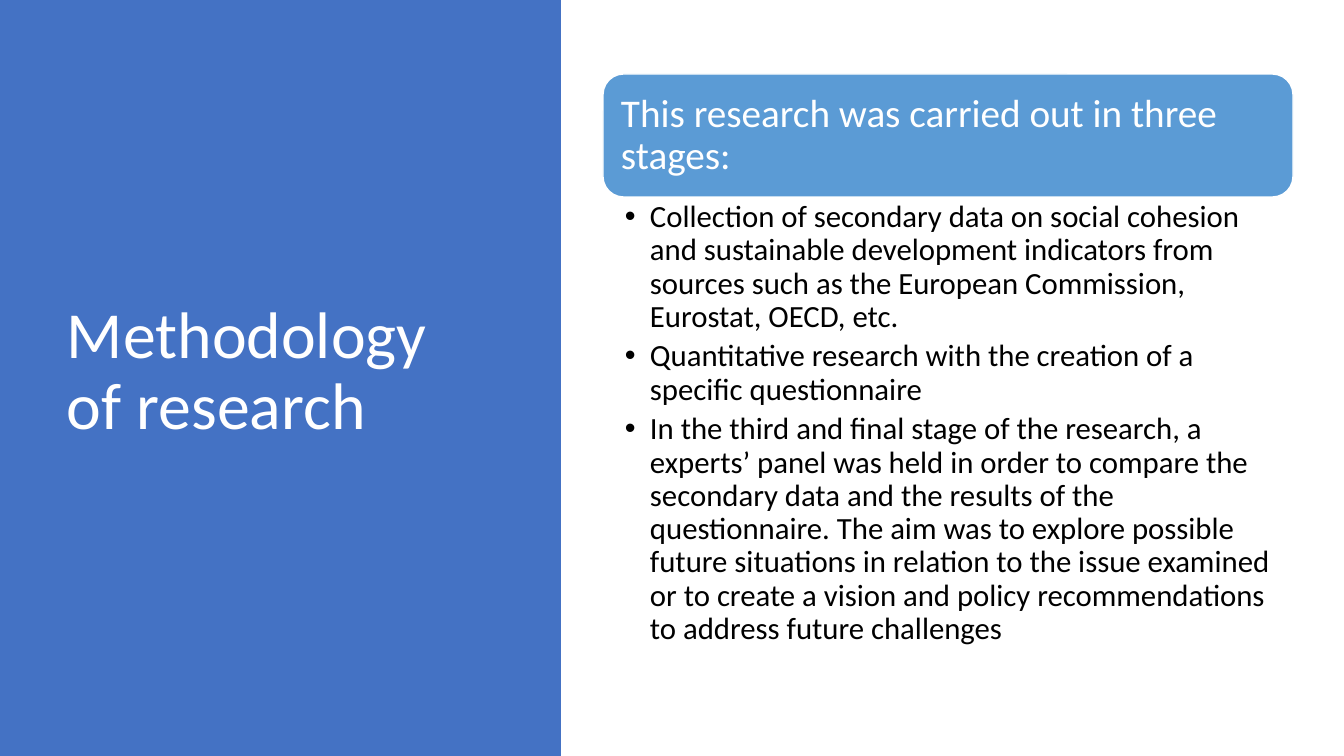
from lxml.etree import SubElement
from pptx import Presentation
from pptx.dml.color import RGBColor
from pptx.enum.shapes import MSO_SHAPE
from pptx.enum.text import MSO_ANCHOR, PP_ALIGN
from pptx.oxml.ns import qn
from pptx.util import Emu, Pt

WHITE = "FFFFFF"
PANEL_BLUE = "4472C4"
HEADING_BLUE = "5B9BD5"
BLACK = "000000"

STAGES = [
    "Collection of secondary data on social cohesion and sustainable development "
    "indicators from sources such as the European Commission, Eurostat, OECD, etc.",
    "Quantitative research with the creation of a specific questionnaire",
    "In the third and final stage of the research, a experts’ panel was held in order "
    "to compare the secondary data and the results of the questionnaire. The aim was "
    "to explore possible future situations in relation to the issue examined or to "
    "create a vision and policy recommendations to address future challenges",
]


def px(length):
    """Turn pixels (100.8 to the inch) into EMU."""
    return Emu(round(length * 914400 / 100.8))


def color(hex_value):
    return RGBColor.from_string(hex_value)


def set_values(target, values):
    for name, value in values.items():
        setattr(target, name, value)


def add_block(slide, preset, box, fill, outline=None):
    shape = slide.shapes.add_shape(preset, *map(px, box))
    shape.shadow.inherit = False
    shape.fill.solid()
    shape.fill.fore_color.rgb = color(fill)
    if outline:
        shape.line.color.rgb = color(outline)
        shape.line.width = Pt(1)
    else:
        shape.line.fill.background()
    return shape


def add_bullet(paragraph, indent):
    properties = paragraph._p.get_or_add_pPr()
    properties.set("marL", str(px(indent)))
    properties.set("indent", str(-px(indent)))
    SubElement(properties, qn("a:buFont"), typeface="Arial")
    SubElement(properties, qn("a:buChar"), char="•")


def write_text(shape, texts, size, text_color, margins, anchor, space_after=0, bullet_indent=0):
    """Fill a shape with paragraphs; margins are horizontal and vertical px."""
    horizontal, vertical = map(px, margins)
    frame = shape.text_frame
    set_values(frame, {
        "word_wrap": True,
        "vertical_anchor": anchor,
        "margin_left": horizontal,
        "margin_right": horizontal,
        "margin_top": vertical,
        "margin_bottom": vertical,
    })
    for index, text in enumerate(texts):
        paragraph = frame.add_paragraph() if index else frame.paragraphs[0]
        paragraph.text = text
        if bullet_indent:
            add_bullet(paragraph, bullet_indent)
        set_values(paragraph, {
            "alignment": PP_ALIGN.LEFT,
            "line_spacing": 0.9,
            "space_after": Pt(space_after),
        })
        set_values(paragraph.font, {"name": "Calibri", "size": Pt(size)})
        paragraph.font.color.rgb = color(text_color)


def main():
    presentation = Presentation()
    set_values(presentation, {"slide_width": px(1344), "slide_height": px(756)})
    slide = presentation.slides.add_slide(presentation.slide_layouts[6])

    add_block(slide, MSO_SHAPE.RECTANGLE, (0, 0, 561, 756), PANEL_BLUE)
    title = slide.shapes.add_textbox(*map(px, (57, 69, 419, 607)))
    write_text(title, ["Methodology of research"], 47, WHITE, (10, 5), MSO_ANCHOR.MIDDLE)

    heading = add_block(
        slide, MSO_SHAPE.ROUNDED_RECTANGLE, (603, 74, 690, 123), HEADING_BLUE, WHITE
    )
    write_text(heading, ["This research was carried out in three stages:"],
               28, WHITE, (12, 12), MSO_ANCHOR.MIDDLE)

    stages = slide.shapes.add_textbox(*map(px, (603, 197, 690, 473)))
    write_text(stages, STAGES, 22, BLACK, (22, 4), MSO_ANCHOR.TOP,
               space_after=4.5, bullet_indent=25)

    presentation.save("out.pptx")


if __name__ == "__main__":
    main()
